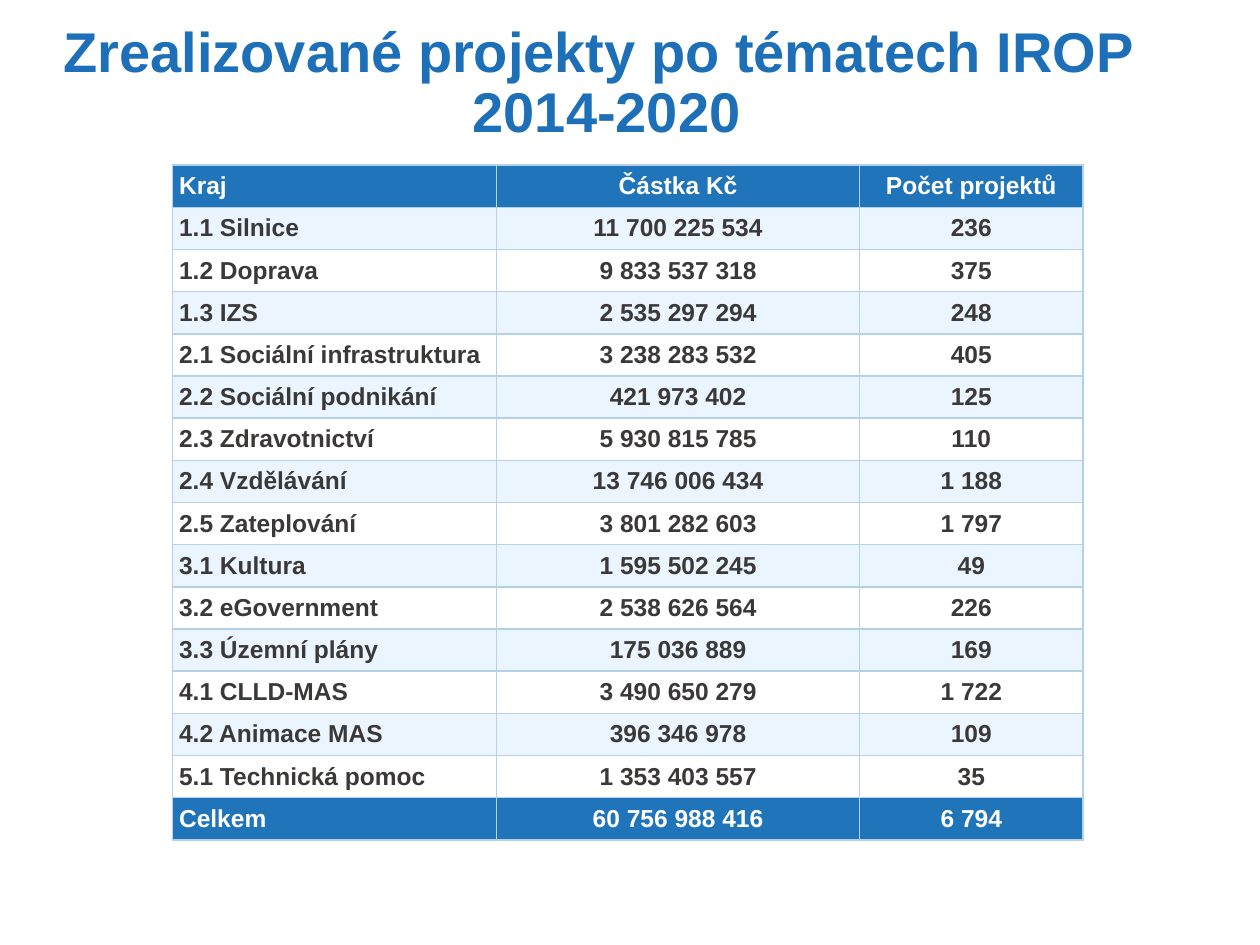
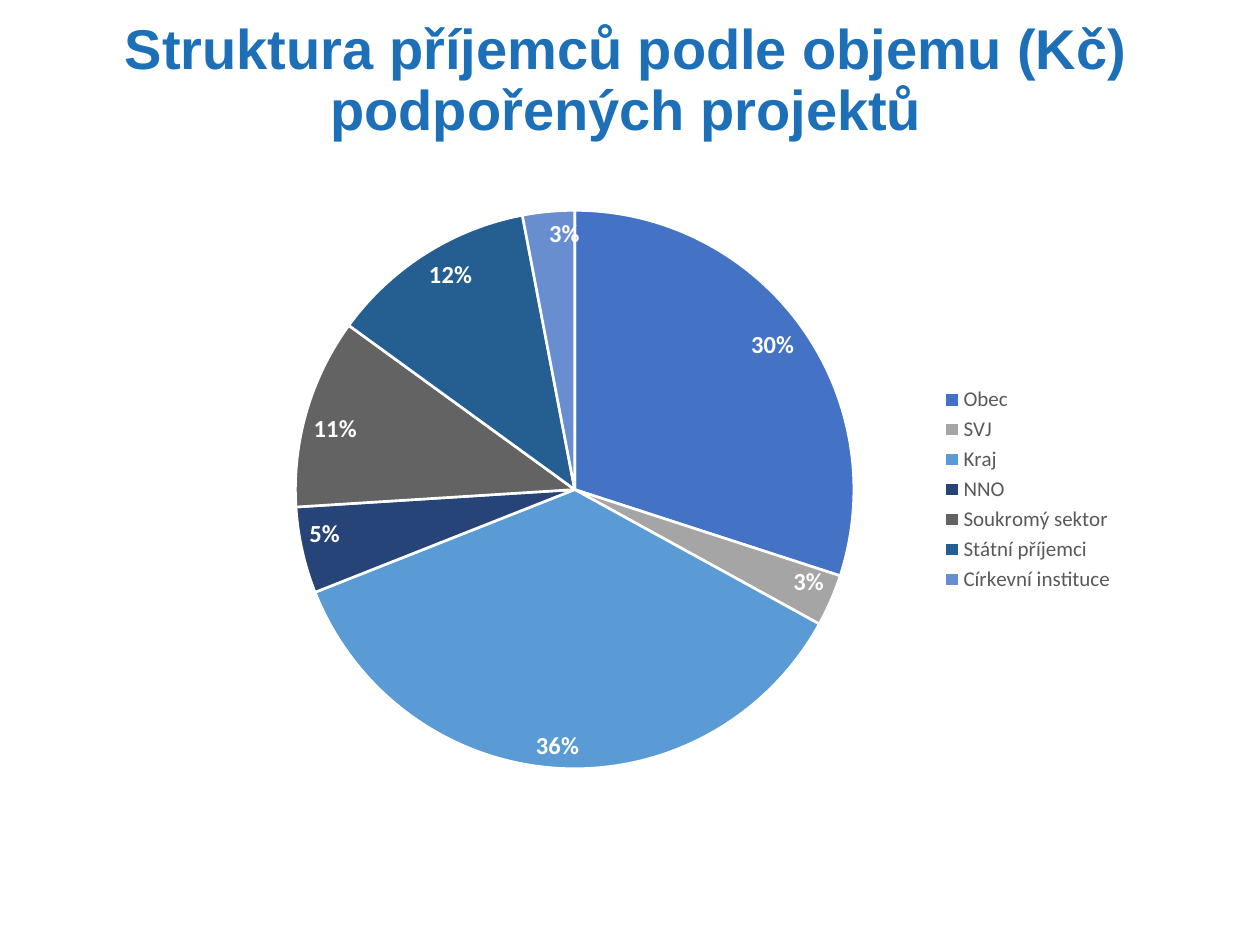
from dataclasses import dataclass
from typing import NamedTuple

from lxml import etree
from pptx import Presentation
from pptx.chart.data import CategoryChartData
from pptx.dml.color import RGBColor
from pptx.enum.chart import XL_CHART_TYPE, XL_LABEL_POSITION, XL_LEGEND_POSITION
from pptx.enum.text import MSO_ANCHOR, MSO_AUTO_SIZE, PP_ALIGN
from pptx.oxml.ns import qn
from pptx.util import Cm, Pt

PIE = XL_CHART_TYPE.PIE
INSIDE_END = XL_LABEL_POSITION.INSIDE_END
LEGEND_RIGHT = XL_LEGEND_POSITION.RIGHT
ANCHOR_BOTTOM = MSO_ANCHOR.BOTTOM
ANCHOR_MIDDLE = MSO_ANCHOR.MIDDLE
NO_AUTOFIT = MSO_AUTO_SIZE.NONE
ALIGN_LEFT = PP_ALIGN.LEFT
ALIGN_CENTER = PP_ALIGN.CENTER
TITLE_ONLY = 5


@dataclass(frozen=True)
class Theme:
    title: str = "1D70B8"
    band: str = "2074BA"
    stripe: str = "EBF5FF"
    white: str = "FFFFFF"
    body: str = "3B3838"
    border: str = "B4D1E8"
    legend: str = "595959"
    text_font: str = "Arial"
    chart_font: str = "Calibri"
    title_size: float = 32
    table_size: float = 14
    label_size: float = 14
    legend_size: float = 12
    border_width: float = 1
    slice_border_width: float = 1.5


THEME = Theme()


class Box(NamedTuple):
    """Position and size in centimetres."""
    left: float
    top: float
    width: float
    height: float

    def lengths(self) -> tuple:
        return tuple(Cm(value) for value in self)


class TableRow(NamedTuple):
    topic: str
    amount: str
    projects: str


class Recipient(NamedTuple):
    name: str
    share: float
    color: str


# Table content
HEADER = TableRow("Kraj", "Částka Kč", "Počet projektů")
TOPICS = [
    TableRow("1.1 Silnice", "11 700 225 534", "236"),
    TableRow("1.2 Doprava", "9 833 537 318", "375"),
    TableRow("1.3 IZS", "2 535 297 294", "248"),
    TableRow("2.1 Sociální infrastruktura", "3 238 283 532", "405"),
    TableRow("2.2 Sociální podnikání", "421 973 402", "125"),
    TableRow("2.3 Zdravotnictví", "5 930 815 785", "110"),
    TableRow("2.4 Vzdělávání", "13 746 006 434", "1 188"),
    TableRow("2.5 Zateplování", "3 801 282 603", "1 797"),
    TableRow("3.1 Kultura", "1 595 502 245", "49"),
    TableRow("3.2 eGovernment", "2 538 626 564", "226"),
    TableRow("3.3 Územní plány", "175 036 889", "169"),
    TableRow("4.1 CLLD-MAS", "3 490 650 279", "1 722"),
    TableRow("4.2 Animace MAS", "396 346 978", "109"),
    TableRow("5.1 Technická pomoc", "1 353 403 557", "35"),
]
TOTAL = TableRow("Celkem", "60 756 988 416", "6 794")
COLUMN_WIDTHS = (6.53, 7.32, 4.5)
ROW_HEIGHT = 0.85

# Chart content
RECIPIENTS = [
    Recipient("Obec", 0.30, "4472C4"),
    Recipient("SVJ", 0.03, "A5A5A5"),
    Recipient("Kraj", 0.36, "5B9BD5"),
    Recipient("NNO", 0.05, "264478"),
    Recipient("Soukromý sektor", 0.11, "636363"),
    Recipient("Státní příjemci", 0.12, "255E91"),
    Recipient("Církevní instituce", 0.03, "698ED0"),
]


def format_font(font, name: str, size: float, color: str, bold: bool) -> None:
    font.name = name
    font.size = Pt(size)
    font.bold = bold
    font.color.rgb = RGBColor.from_string(color)


def add_titled_slide(presentation, title: str, box: Box):
    slide = presentation.slides.add_slide(presentation.slide_layouts[TITLE_ONLY])
    shape = slide.shapes.title
    shape.left, shape.top, shape.width, shape.height = box.lengths()
    frame = shape.text_frame
    frame.text = title
    frame.word_wrap = True
    frame.auto_size = NO_AUTOFIT
    frame.vertical_anchor = ANCHOR_BOTTOM
    paragraph = frame.paragraphs[0]
    paragraph.alignment = ALIGN_CENTER
    paragraph.line_spacing = 0.9
    for run in paragraph.runs:
        format_font(run.font, THEME.text_font, THEME.title_size, THEME.title, True)
    return slide


def add_cell_borders(cell) -> None:
    properties = cell._tc.get_or_add_tcPr()
    for side in ("a:lnL", "a:lnR", "a:lnT", "a:lnB"):
        line = etree.SubElement(properties, qn(side), w=str(Pt(THEME.border_width)))
        fill = etree.SubElement(line, qn("a:solidFill"))
        etree.SubElement(fill, qn("a:srgbClr"), val=THEME.border)


def format_cell(cell, text: str, alignment, fill: str, color: str) -> None:
    add_cell_borders(cell)
    cell.fill.solid()
    cell.fill.fore_color.rgb = RGBColor.from_string(fill)
    cell.vertical_anchor = ANCHOR_MIDDLE
    cell.margin_left = cell.margin_right = Cm(0.13)
    cell.margin_top = cell.margin_bottom = 0
    cell.text_frame.text = text
    paragraph = cell.text_frame.paragraphs[0]
    paragraph.alignment = alignment
    format_font(paragraph.runs[0].font, THEME.text_font, THEME.table_size, color, True)


def add_topics_table(slide, left: float, top: float) -> None:
    rows = [HEADER, *TOPICS, TOTAL]
    box = Box(left, top, sum(COLUMN_WIDTHS), ROW_HEIGHT * len(rows))
    table = slide.shapes.add_table(len(rows), len(COLUMN_WIDTHS), *box.lengths()).table
    table.first_row = table.horz_banding = False
    for column, width in zip(table.columns, COLUMN_WIDTHS):
        column.width = Cm(width)
    for row_index, row in enumerate(rows):
        table.rows[row_index].height = Cm(ROW_HEIGHT)
        if row in (HEADER, TOTAL):
            fill, color = THEME.band, THEME.white
        else:
            fill = THEME.stripe if row_index % 2 else THEME.white
            color = THEME.body
        for column_index, text in enumerate(row):
            alignment = ALIGN_CENTER if column_index else ALIGN_LEFT
            format_cell(table.cell(row_index, column_index), text, alignment, fill, color)


def add_recipients_chart(slide, box: Box) -> None:
    data = CategoryChartData(number_format="0%")
    data.categories = [recipient.name for recipient in RECIPIENTS]
    data.add_series("Series 1", [recipient.share for recipient in RECIPIENTS])
    chart = slide.shapes.add_chart(PIE, *box.lengths(), data).chart
    chart.has_title = False
    chart.font.name = THEME.chart_font

    # Legend
    chart.has_legend = True
    chart.legend.position = LEGEND_RIGHT
    chart.legend.include_in_layout = False
    format_font(chart.legend.font, THEME.chart_font, THEME.legend_size, THEME.legend, False)

    # Slices
    plot = chart.plots[0]
    plot.vary_by_categories = True
    for index, recipient in enumerate(RECIPIENTS):
        slice_format = plot.series[0].points[index].format
        slice_format.fill.solid()
        slice_format.fill.fore_color.rgb = RGBColor.from_string(recipient.color)
        slice_format.line.color.rgb = RGBColor.from_string(THEME.white)
        slice_format.line.width = Pt(THEME.slice_border_width)

    # Share labels
    labels = plot.series[0].data_labels
    labels.show_value = True
    labels.show_percentage = False
    labels.number_format = "0%"
    labels.number_format_is_linked = False
    labels.position = INSIDE_END
    format_font(labels.font, THEME.chart_font, THEME.label_size, THEME.white, True)


def main() -> None:
    presentation = Presentation()
    presentation.slide_width = Cm(25.4)
    presentation.slide_height = Cm(19.05)

    # Projects by topic
    slide = add_titled_slide(
        presentation,
        "Zrealizované projekty po tématech IROP \v2014-2020",
        Box(0, 0.84, 24.46, 2.21),
    )
    add_topics_table(slide, 3.48, 3.33)

    # Recipients by volume
    slide = add_titled_slide(
        presentation,
        "Struktura příjemců podle objemu (Kč) podpořených projektů",
        Box(1.22, 0.79, 22.81, 2.21),
    )
    add_recipients_chart(slide, Box(4.24, 3.89, 18.49, 11.96))

    presentation.save("out.pptx")


if __name__ == "__main__":
    main()
